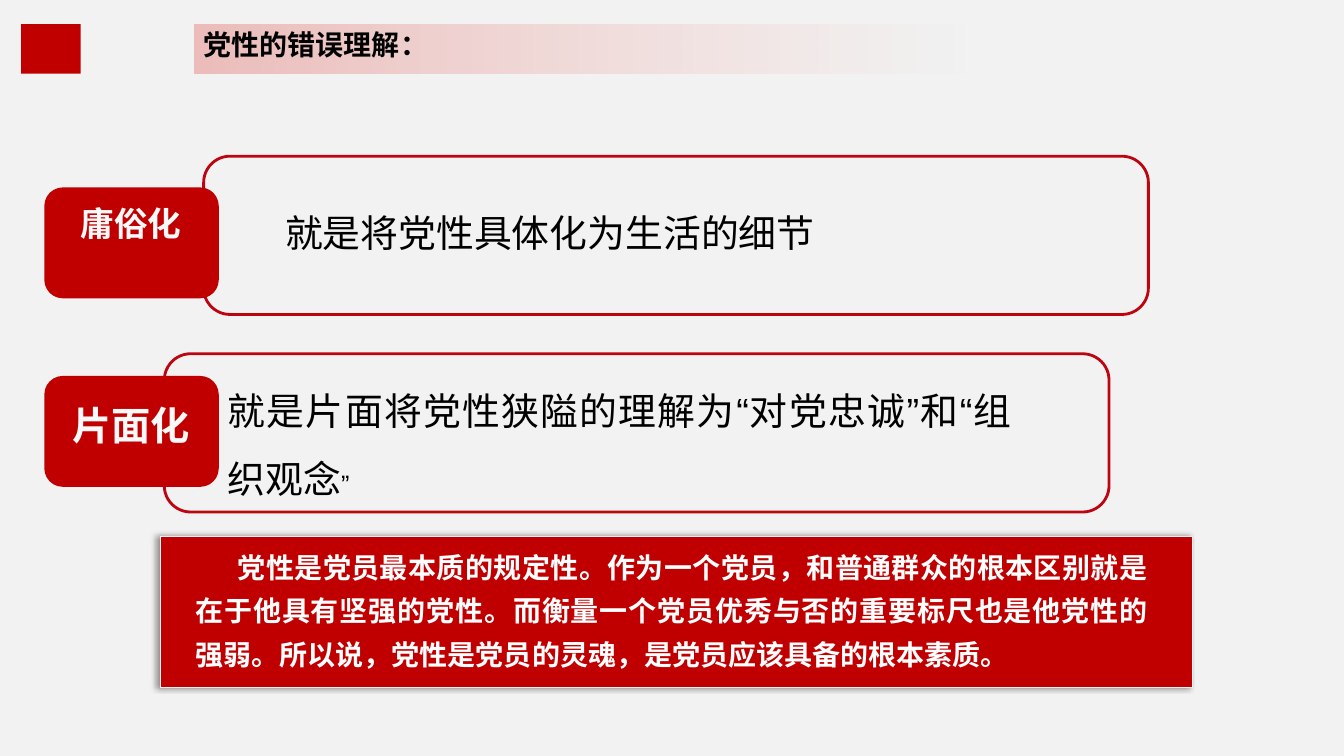
from dataclasses import dataclass

from lxml.etree import SubElement
from pptx import Presentation
from pptx.dml.color import RGBColor
from pptx.enum.lang import MSO_LANGUAGE_ID as Lang
from pptx.enum.shapes import MSO_SHAPE as Shape
from pptx.enum.text import MSO_ANCHOR as Anchor, MSO_AUTO_SIZE as AutoSize, PP_ALIGN as Align
from pptx.oxml.ns import qn
from pptx.util import Inches, Pt

TITLE = "党性的错误理解："
# label, its size, label text top, panel (left, top), badge top, text (left, top, height), runs
MISREADINGS = [
    dict(label="庸俗化", size=24, label_top=1.96, panel=(2.02, 1.55), badge_top=1.86,
         text=(2.73, 1.81, 0.78), runs=[("就是将党性具体化为生活的细节", 27)]),
    dict(label="片面化", size=28, label_top=3.93, panel=(1.63, 3.51), badge_top=3.73,
         text=(2.16, 3.57, 1.46),
         runs=[("就是片面将党性狭隘的理解为“对党忠诚”和“组织观念", 27), ("”", 18)]),
]
SUMMARY = ("党性是党员最本质的规定性。作为一个党员，和普通群众的根本区别就是在于他具有坚强的党性。"
           "而衡量一个党员优秀与否的重要标尺也是他党性的强弱。"
           "所以说，党性是党员的灵魂，是党员应该具备的根本素质。")


@dataclass(frozen=True)
class Theme:
    font: str = "Arial"
    paper: str = "F2F2F2"
    red: str = "C00000"
    outline: str = "BD0411"
    band: tuple = (("F05F55", 0), ("D7190F", 25))
    ink: str = "000000"
    label: str = "F8F8F8"
    white: str = "FFFFFF"
    heading: int = 20


T = Theme()
rgb = RGBColor.from_string


def box(slide, kind, at, fill=None, line=None, width=1):
    sp = slide.shapes.add_shape(kind, *map(Inches, at))
    sp.shadow.inherit = False
    if fill:
        sp.fill.solid()
        sp.fill.fore_color.rgb = rgb(fill)
    else:
        sp.fill.background()
    if line:
        sp.line.color.rgb = rgb(line)
        sp.line.width = Pt(width)
    else:
        sp.line.fill.background()
    return sp


def write(tf, runs, color=T.ink, bold=False, align=Align.JUSTIFY, spacing=None, indent=0):
    """Fill a text frame with one paragraph of (text, size) runs."""
    tf.word_wrap = True
    tf.vertical_anchor = Anchor.TOP
    p = tf.paragraphs[0]
    p.alignment = align
    p.line_spacing = spacing
    if indent:
        p._p.get_or_add_pPr().set("indent", str(Inches(indent)))
    for text, size in runs:
        r = p.add_run()
        r.text = text
        r.font.size = Pt(size)
        r.font.bold = bold
        r.font.color.rgb = rgb(color)
        r.font.name = T.font
        r.font.language_id = Lang.SIMPLIFIED_CHINESE
        SubElement(r.font._element, qn("a:ea"), typeface=T.font)


def text_box(slide, at, runs, **style):
    tf = slide.shapes.add_textbox(*map(Inches, at)).text_frame
    write(tf, runs, **style)
    tf.auto_size = AutoSize.SHAPE_TO_FIT_TEXT


def set_alpha(color, percent):
    SubElement(color, qn("a:alpha"), val=str(percent * 1000))


def add_header(slide):
    band = box(slide, Shape.RECTANGLE, (1.93, 0.24, 7.82, 0.49))
    band.fill.gradient()
    band.fill.gradient_angle = 180
    for stop, (color, alpha) in zip(band.fill.gradient_stops, T.band):
        stop.color.rgb = rgb(color)
        set_alpha(stop._gs.find(qn("a:srgbClr")), alpha)
    box(slide, Shape.RECTANGLE, (0.21, 0.24, 0.59, 0.49), T.red)
    title = slide.shapes.title
    title.left, title.top, title.width, title.height = map(Inches, (1.92, 0.26, 4.7, 0.55))
    write(title.text_frame, [(TITLE, T.heading)], bold=True, align=Align.LEFT, spacing=0.9)
    # Header artwork sits behind the title
    slide.shapes._spTree.append(title._element)


def add_misreading(slide, item):
    rounded = Shape.FLOWCHART_ALTERNATE_PROCESS
    box(slide, rounded, (*item["panel"], 9.37, 1.57), line=T.outline, width=2)
    box(slide, rounded, (0.44, item["badge_top"], 1.73, 1.1), T.red)
    text_box(slide, (0.28, item["label_top"], 2.04, 0.5), [(item["label"], item["size"])],
             color=T.label, bold=True, align=Align.CENTER)
    left, top, height = item["text"]
    text_box(slide, (left, top, 7.97, height), item["runs"], spacing=1.5)


def add_summary(slide):
    sp = box(slide, Shape.RECTANGLE, (1.59, 5.32, 10.24, 1.5), T.red, T.paper)
    shadow = SubElement(sp._element.spPr.find(qn("a:effectLst")), qn("a:outerShdw"),
                        blurRad=str(Pt(4)), dist=str(Pt(3)), dir="10800000",
                        algn="ctr", rotWithShape="0")
    set_alpha(SubElement(shadow, qn("a:srgbClr"), val=T.ink), 40)
    text_box(slide, (1.84, 5.31, 9.64, 1.41), [(SUMMARY, T.heading)],
             color=T.white, bold=True, spacing=1.3, indent=0.42)


def main():
    prs = Presentation()
    prs.slide_width, prs.slide_height = Inches(13.33), Inches(7.5)
    slide = prs.slides.add_slide(prs.slide_layouts[5])
    slide.background.fill.solid()
    slide.background.fill.fore_color.rgb = rgb(T.paper)
    add_header(slide)
    for item in MISREADINGS:
        add_misreading(slide, item)
    add_summary(slide)
    prs.save("out.pptx")


if __name__ == "__main__":
    main()
